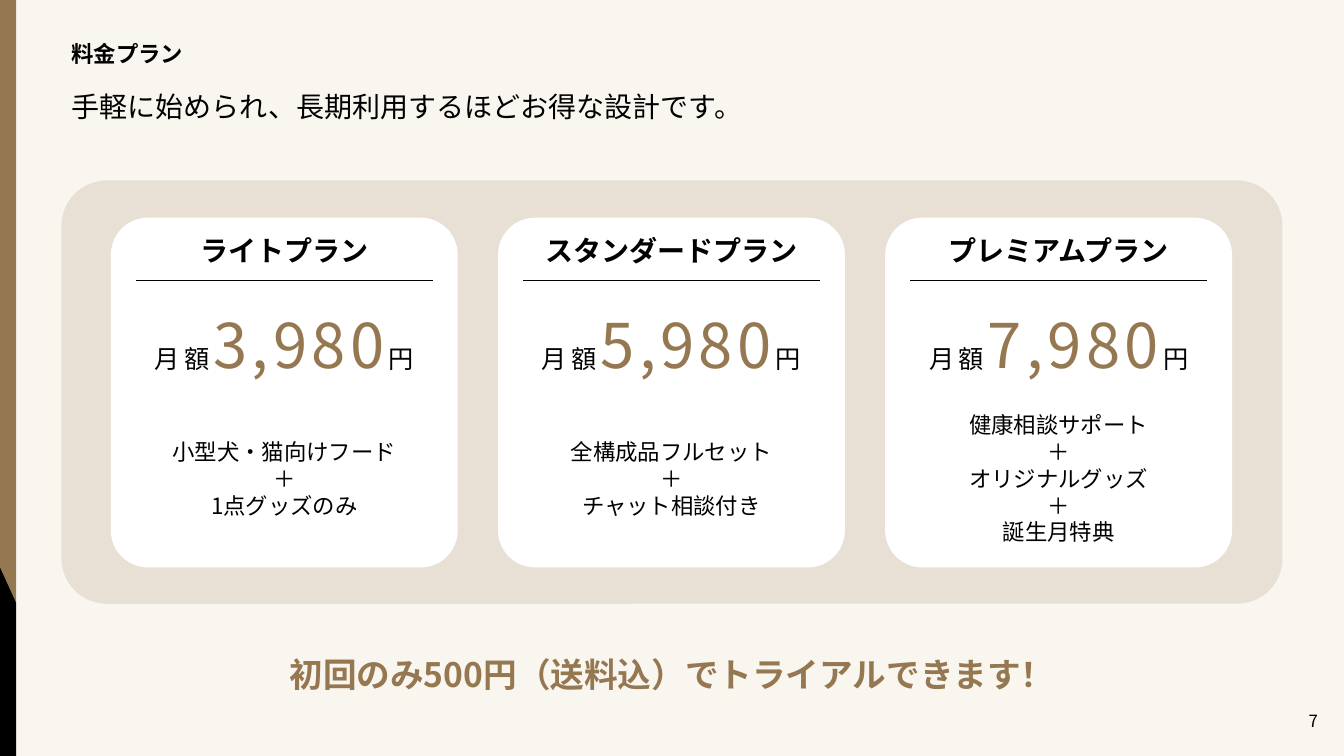
from lxml import etree
from pptx import Presentation
from pptx.dml.color import RGBColor
from pptx.enum import shapes, text
from pptx.oxml.ns import qn
from pptx.util import Inches, Pt

CREAM = RGBColor(0xF9, 0xF6, 0xF0)
BEIGE = RGBColor(0xE8, 0xE0, 0xD5)
BROWN = RGBColor(0x95, 0x78, 0x51)
BLACK = RGBColor(0, 0, 0)
WHITE = RGBColor(0xFF, 0xFF, 0xFF)

FORM = shapes.MSO_SHAPE
LEFT, CENTER, RIGHT = text.PP_ALIGN.LEFT, text.PP_ALIGN.CENTER, text.PP_ALIGN.RIGHT
TOP, MIDDLE = text.MSO_ANCHOR.TOP, text.MSO_ANCHOR.MIDDLE

SLIDE_W, SLIDE_H = 13.33, 7.5
MARGIN, CONTENT_W = 0.61, 12.11
STRIPE_W, STRIPE_SPLIT = 0.16, 5.98
CARD_LEFT, CARD_TOP, CARD_W, CARD_H, CARD_PITCH = 1.1, 2.16, 3.44, 3.47, 3.84

PLANS = [
    ("ライトプラン", "3,980", ["小型犬・猫向けフード", "＋", "1点グッズのみ"]),
    ("スタンダードプラン", "5,980", ["全構成品フルセット", "＋", "チャット相談付き"]),
    ("プレミアムプラン", "7,980",
     ["健康相談サポート", "＋", "オリジナルグッズ", "＋", "誕生月特典"]),
]


class PlanSlide:
    font_name = "Noto Sans CJK JP"
    corner = 0.107

    def __init__(self, slide):
        self.shapes = slide.shapes

    def block(self, form, left, top, width, height, color):
        block = self.shapes.add_shape(form, *map(Inches, (left, top, width, height)))
        block.shadow.inherit = False
        block.fill.solid()
        block.fill.fore_color.rgb = color
        block.line.fill.background()
        if form == FORM.ROUNDED_RECTANGLE:
            block.adjustments[0] = self.corner
        return block

    def rule(self, left, top, width):
        rule = self.shapes.add_connector(
            shapes.MSO_CONNECTOR.STRAIGHT,
            *map(Inches, (left, top, left + width, top)))
        rule.line.color.rgb = BLACK
        rule.line.width = Pt(0.75)
        etree.SubElement(rule._element.spPr, qn("a:effectLst"))

    def fill_text(self, frame, paragraphs, align=LEFT, anchor=MIDDLE, tracking=None):
        """Fill a frame; each paragraph is a list of (words, format) runs."""
        frame.word_wrap = True
        frame.vertical_anchor = anchor
        for index, runs in enumerate(paragraphs):
            line = frame.add_paragraph() if index else frame.paragraphs[0]
            line.alignment = align
            for words, style in runs:
                run = line.add_run()
                run.text = words
                run.font.color.rgb = style.get("color", BLACK)
                for key, value in {"name": self.font_name, "size": Pt(style["size"]),
                                   "bold": style.get("bold", False)}.items():
                    setattr(run.font, key, value)
                properties = run._r.get_or_add_rPr()
                if tracking:
                    properties.set("spc", str(tracking * 100))
                east_asian = etree.SubElement(properties, qn("a:ea"))
                east_asian.set("typeface", self.font_name)

    def label(self, left, top, width, height, paragraphs, **layout):
        box = self.shapes.add_textbox(*map(Inches, (left, top, width, height)))
        self.fill_text(box.text_frame, paragraphs, **layout)

    def plan_card(self, left, name, price, contents):
        card = self.block(FORM.ROUNDED_RECTANGLE, left, CARD_TOP, CARD_W, CARD_H, WHITE)
        self.fill_text(card.text_frame, [[(name, {"size": 20, "bold": True})]],
                       align=CENTER, anchor=TOP)
        self.rule(left + 0.25, 2.78, CARD_W - 0.5)
        inner_left, inner_width = left + 0.16, CARD_W - 0.32
        unit = {"size": 18}
        self.label(inner_left, 3.02, inner_width, 0.79,
                   [[("月額", unit), (price, {"size": 44, "color": BROWN}), ("円", unit)]],
                   align=CENTER, tracking=3)
        self.label(inner_left, 3.98, inner_width, 1.53,
                   [[(item, {"size": 16})] for item in contents], align=CENTER)


def main():
    deck = Presentation()
    deck.slide_width, deck.slide_height = Inches(SLIDE_W), Inches(SLIDE_H)
    page = PlanSlide(deck.slides.add_slide(deck.slide_layouts[6]))

    page.block(FORM.RECTANGLE, 0, 0, SLIDE_W, SLIDE_H, CREAM)
    page.label(MARGIN, 0.26, CONTENT_W, 0.54,
               [[("料金プラン", {"size": 16, "bold": True})]])
    page.label(MARGIN, 0.78, CONTENT_W, 0.54,
               [[("手軽に始められ、長期利用するほどお得な設計です。", {"size": 20})]])

    page.block(FORM.RECTANGLE, 0, 0, STRIPE_W, STRIPE_SPLIT, BROWN)
    page.block(FORM.RECTANGLE, 0, STRIPE_SPLIT, STRIPE_W, SLIDE_H - STRIPE_SPLIT, BLACK)
    page.block(FORM.RIGHT_TRIANGLE, 0, STRIPE_SPLIT - 0.35, STRIPE_W, 0.35, BLACK)
    page.label(12.68, 6.95, 0.49, 0.4, [[("7", {"size": 12})]], align=RIGHT)

    page.block(FORM.ROUNDED_RECTANGLE, MARGIN, 1.79, CONTENT_W, 4.2, BEIGE)
    for column, plan in enumerate(PLANS):
        page.plan_card(CARD_LEFT + column * CARD_PITCH, *plan)

    page.label(MARGIN, 6.36, CONTENT_W, 0.65,
               [[("初回のみ500円（送料込）でトライアルできます！",
                  {"size": 24, "bold": True, "color": BROWN})]], align=CENTER)
    deck.save("out.pptx")


if __name__ == "__main__":
    main()
